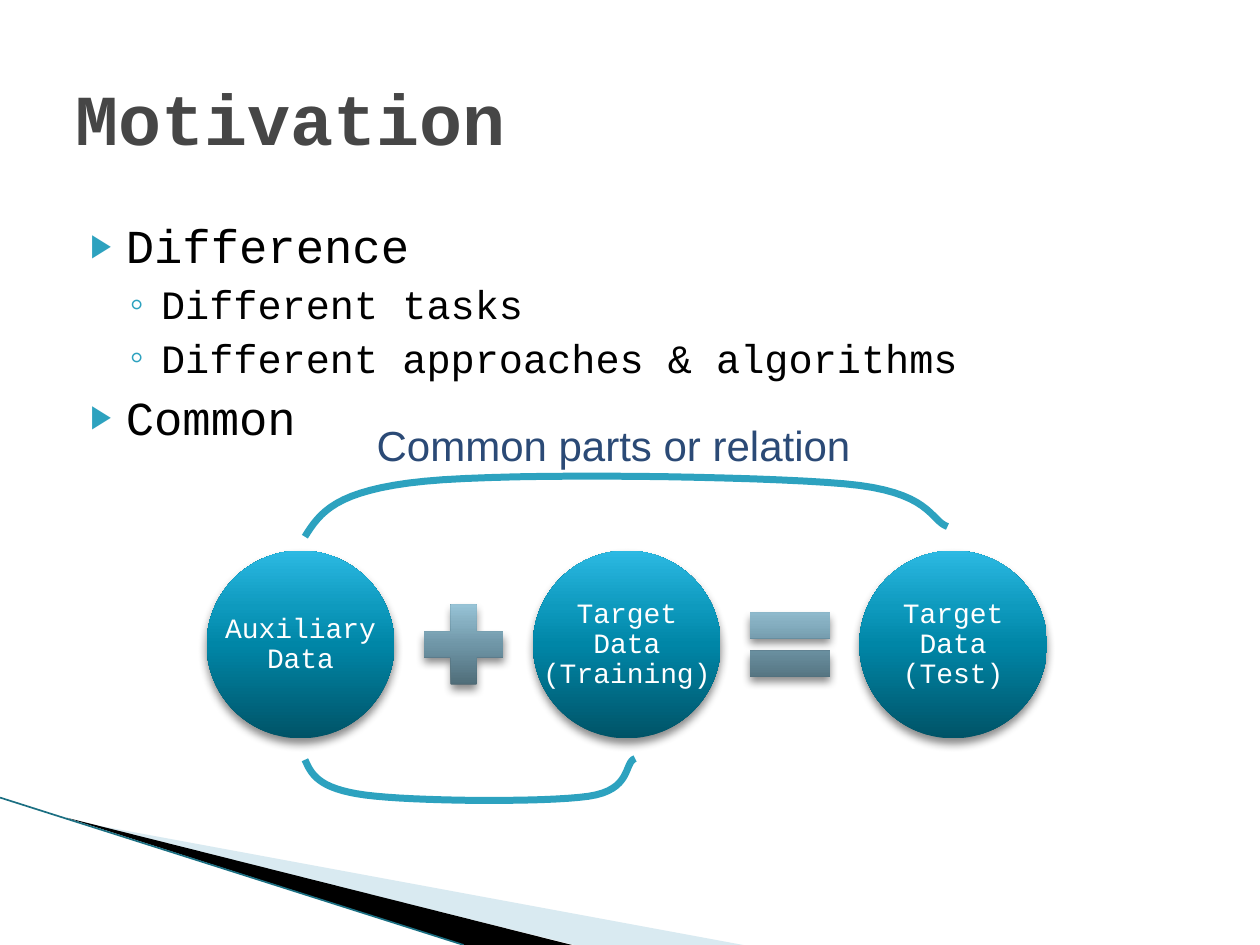
from lxml import etree
from pptx import Presentation
from pptx.dml.color import RGBColor
from pptx.enum.shapes import MSO_CONNECTOR, MSO_SHAPE
from pptx.enum.text import MSO_ANCHOR, PP_ALIGN
from pptx.oxml.ns import qn
from pptx.util import Inches, Pt

LINE = MSO_CONNECTOR.STRAIGHT
DISC, PLUS, EQUAL = MSO_SHAPE.OVAL, MSO_SHAPE.MATH_PLUS, MSO_SHAPE.MATH_EQUAL
TOP, MIDDLE = MSO_ANCHOR.TOP, MSO_ANCHOR.MIDDLE
LEFT, CENTER = PP_ALIGN.LEFT, PP_ALIGN.CENTER
MONO, SANS = "Courier New", "Arial"
COLORS = {
    "title": "464646", "body": "000000", "accent": "2DA2BF", "label": "FFFFFF",
    "caption": "2B4A76", "pale": "A0CBDC", "edge": "1B6F82", "black": "000000",
}
BLUES = [(0, "005367"), (50, "0086A7"), (70, "0E9ABE"), (100, "2CB9E3")]
GRAYS = [(0, "445E68"), (50, "6F96A7"), (70, "86AFC1"), (100, "A6D5E9")]
BULLETS = [("▶", 68, 0.4, -0.28, 27, 4), ("◦", 100, 0.68, -0.25, 23, 3.2)]


def color(name):
    return RGBColor.from_string(COLORS[name])


def node(parent, tag, **attrs):
    return etree.SubElement(parent, qn(tag), {k: str(v) for k, v in attrs.items()})


def tint(parent, value, alpha=100):
    fill = node(parent, "a:srgbClr", val=value)
    if alpha < 100:
        node(fill, "a:alpha", val=alpha * 1000)


def add_text(slide, box, text, level=None, frame=None, font=MONO, size=16, ink="body",
             bold=False, align=LEFT, anchor=TOP, inset=None, space=None):
    if frame is None:
        frame = slide.shapes.add_textbox(*map(Inches, box)).text_frame
        frame.word_wrap = True
        frame.vertical_anchor = anchor
        if inset is not None:
            frame.margin_left = frame.margin_right = Inches(inset)
            frame.margin_top = frame.margin_bottom = Inches(inset)
        para = frame.paragraphs[0]
        first = True
    else:
        para = frame.add_paragraph()
        first = False
    if level is not None:
        mark, scale, margin, indent, size, before = BULLETS[level]
        props = para._p.get_or_add_pPr()
        props.set("marL", str(Inches(margin)))
        props.set("indent", str(Inches(indent)))
        tint(node(props, "a:buClr"), COLORS["accent"])
        node(props, "a:buSzPct", val=scale * 1000)
        node(props, "a:buFont", typeface=SANS)
        node(props, "a:buChar", char=mark)
        para.level = level
        if not first:
            para.space_before = Pt(before)
    para.alignment = align
    if space:
        para.line_spacing = space
    run = para.add_run()
    run.text = text
    run.font.name, run.font.size, run.font.bold = font, Pt(size), bold
    run.font.color.rgb = color(ink)
    return frame


def add_path(slide, box, points, close):
    left, top = box[:2]
    spots = [(Inches(left + x), Inches(top + y)) for x, y in points]
    form = slide.shapes.build_freeform(*spots[0], scale=1.0)
    form.add_line_segments(spots[1:], close=close)
    shape = form.convert_to_shape()
    shape.shadow.inherit = False
    return shape


def add_wedge(slide, box, points, ink, alpha=100):
    shape = add_path(slide, box, points, True)
    shape.fill.solid()
    shape.fill.fore_color.rgb = color(ink)
    shape.line.fill.background()
    if alpha < 100:
        fill = shape._element.spPr.find(qn("a:solidFill"))
        node(fill[0], "a:alpha", val=alpha * 1000)


def add_corner(slide, box):
    left, top, wide, high = box
    add_wedge(slide, box, [(0.55, 0.18), (5.9, high), (4.56, high)], "pale", 40)
    add_wedge(slide, box, [(0.53, 0.16), (4.54, high), (3.68, high)], "black")
    edge = slide.shapes.add_connector(
        LINE, Inches(left), Inches(top), Inches(left + 3.68), Inches(top + high))
    edge.line.color.rgb = color("edge")
    edge.line.width = Pt(0.95)
    node(edge._element.spPr, "a:effectLst")


def add_curve(slide, box, start, curves, steps=16):
    points = [start]
    for b, c, d in curves:
        a = points[-1]
        for i in range(1, steps + 1):
            t = i / steps
            u = 1 - t
            points.append(tuple(
                u**3 * p + 3 * u * u * t * q + 3 * u * t * t * r + t**3 * s
                for p, q, r, s in zip(a, b, c, d)))
    shape = add_path(slide, box, points, False)
    shape.fill.background()
    shape.line.color.rgb = color("accent")
    shape.line.width = Pt(4)


def add_solid(slide, kind, box, stops):
    shape = slide.shapes.add_shape(kind, *map(Inches, box))
    shape.fill.gradient()
    shape.fill.gradient_angle = 90
    shape.line.fill.background()
    shape.shadow.inherit = False
    props = shape._element.spPr
    ramp = props.find(qn("a:gradFill")).find(qn("a:gsLst"))
    for stop in list(ramp):
        ramp.remove(stop)
    for place, value in stops:
        tint(node(ramp, "a:gs", pos=place * 1000), value)
    shade = node(props.find(qn("a:effectLst")), "a:outerShdw", blurRad=Pt(5),
                 dist=Pt(3), dir=5400000, algn="ctr", rotWithShape=0)
    tint(shade, COLORS["black"], 45)


def add_sum(slide, box, labels, signs):
    left, top, wide, high = box
    side = 0.86
    pitch = (wide - high) / (len(labels) - 1)
    for i, label in enumerate(labels):
        disc = (left + i * pitch, top, high, high)
        add_solid(slide, DISC, disc, BLUES)
        add_text(slide, disc, label, ink="label", align=CENTER, anchor=MIDDLE,
                 inset=0.02, space=0.9)
    for i, sign in enumerate(signs):
        mid = left + high / 2 + (i + 0.5) * pitch
        add_solid(slide, sign, (mid - side / 2, top + (high - side) / 2, side, side), GRAYS)


def add_links(slide, box):
    left, top = box[:2]
    add_curve(slide, (left, top + 2.27), (0, 0.01), [
        ((0.05, 0.12), (0.1, 0.24), (0.48, 0.29)),
        ((0.85, 0.34), (1.89, 0.35), (2.25, 0.3)),
        ((2.6, 0.25), (2.53, 0.03), (2.62, 0))])
    add_curve(slide, box, (0, 0.51), [
        ((0.12, 0.32), (0.24, 0.14), (0.95, 0.07)),
        ((1.67, 0), (3.59, 0.03), (4.28, 0.09)),
        ((4.97, 0.15), (4.96, 0.38), (5.1, 0.43))])
    add_text(slide, (left + 0.47, top - 0.47, 4.45, 0.5), "Common parts or relation",
             font=SANS, size=24, ink="caption")


def add_body(slide, box, items):
    frame = None
    for level, text in items:
        frame = add_text(slide, box, text, level=level, frame=frame)


def main():
    deck = Presentation()
    deck.slide_width, deck.slide_height = Inches(10), Inches(7.5)
    slide = deck.slides.add_slide(deck.slide_layouts[6])
    add_corner(slide, (0, 6.33, 5.9, 1.17))
    add_body(slide, (0.5, 1.67, 9, 4.9), [
        (0, "Difference"), (1, "Different tasks"),
        (1, "Different approaches & algorithms"), (0, "Common")])
    add_text(slide, (0.5, 0.3, 9, 1.25), "Motivation", size=41, ink="title",
             bold=True, anchor=MIDDLE)
    add_sum(slide, (1.64, 4.37, 6.67, 1.49),
            ["Auxiliary Data", "Target Data (Training)", "Target Data (Test)"],
            [PLUS, EQUAL])
    add_links(slide, (2.42, 3.75, 5.1, 2.62))
    deck.save("out.pptx")


if __name__ == "__main__":
    main()
